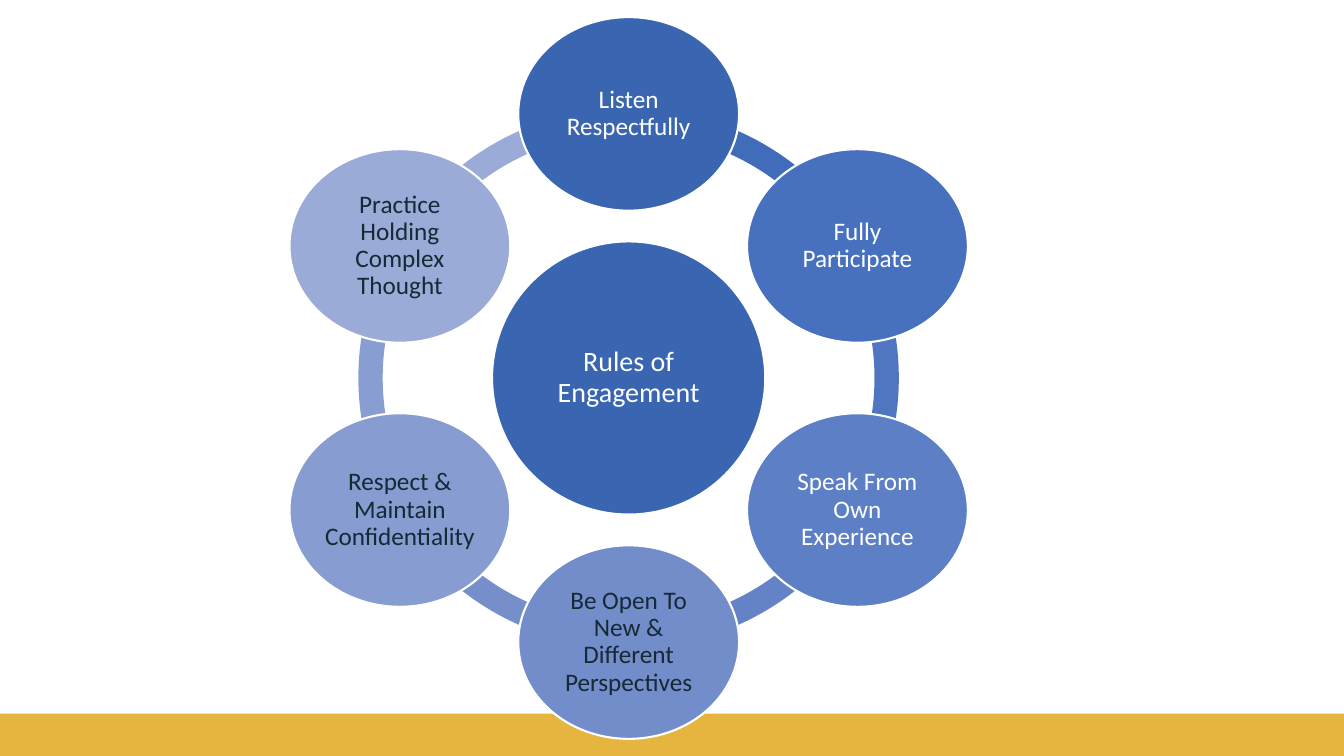
from math import cos, radians, sin

from pptx import Presentation
from pptx.dml.color import RGBColor
from pptx.enum.shapes import MSO_SHAPE
from pptx.enum.text import MSO_ANCHOR, PP_ALIGN
from pptx.util import Inches, Pt

WHITE, INK, GOLD, BLUE = "FFFFFF", "152A35", "E5B53F", "3A66B1"

# Rule, circle colour, text colour, colour of the arc leading to the next rule
RULES = [
    ("Listen Respectfully", BLUE, WHITE, "406CBA"),
    ("Fully Participate", "4770BF", WHITE, "5076C1"),
    ("Speak From Own Experience", "5C7FC5", WHITE, "6383C6"),
    ("Be Open To New & Different Perspectives", "728DCA", INK, "768FCB"),
    ("Respect & Maintain Confidentiality", "879CD1", INK, "889DD1"),
    ("Practice Holding Complex Thought", "9BABD7", INK, "9BABD7"),
]

# Grid of square cells: 75 rows fill the slide's height
ROWS, COLUMNS = 75, 133.3
CENTER_COLUMN, CENTER_ROW = 62.35, 37.5
ORBIT, RING, HUB = 26.2, 53.6, 27.1
NODE_WIDTH, NODE_HEIGHT = 21.9, 19.2
STEP = 360 / len(RULES)
ADJUSTMENT_PER_DEGREE = 0.6  # 60000 angle units per degree, scaled by 100000


def color(hex_string):
    return RGBColor.from_string(hex_string)


class SlideBuilder:
    font_name = "Calibri"
    line_spacing = 0.9
    outline_width = Pt(1.5)

    def __init__(self, presentation):
        self.slide = presentation.slides.add_slide(presentation.slide_layouts[6])
        self.cell = presentation.slide_height / ROWS

    def shape(self, kind, column, row, width, height, fill):
        box = [round(value * self.cell) for value in (column, row, width, height)]
        shape = self.slide.shapes.add_shape(kind, *box)
        shape.shadow.inherit = False
        shape.fill.solid()
        shape.fill.fore_color.rgb = color(fill)
        shape.line.fill.background()
        return shape

    def centered(self, kind, column, row, width, height, fill):
        return self.shape(kind, column - width / 2, row - height / 2, width, height, fill)

    def arc(self, start, end, fill):
        arc = self.centered(MSO_SHAPE.BLOCK_ARC, CENTER_COLUMN, CENTER_ROW, RING, RING, fill)
        arc.adjustments[0] = start % 360 * ADJUSTMENT_PER_DEGREE
        arc.adjustments[1] = end % 360 * ADJUSTMENT_PER_DEGREE
        arc.adjustments[2] = 0.045

    def circle(self, column, row, width, height, fill, text, text_color, size, inset):
        circle = self.centered(MSO_SHAPE.OVAL, column, row, width, height, fill)
        circle.line.color.rgb = color(WHITE)
        circle.line.width = self.outline_width
        frame = circle.text_frame
        frame.word_wrap = True
        frame.vertical_anchor = MSO_ANCHOR.MIDDLE
        frame.margin_left = frame.margin_right = Inches(inset)
        frame.margin_top = frame.margin_bottom = Inches(inset)
        frame.text = text
        paragraph = frame.paragraphs[0]
        paragraph.alignment = PP_ALIGN.CENTER
        paragraph.line_spacing = self.line_spacing
        font = paragraph.runs[0].font
        font.name, font.size = self.font_name, Pt(size)
        font.color.rgb = color(text_color)


def main():
    presentation = Presentation()
    presentation.slide_width, presentation.slide_height = Inches(13.33), Inches(7.5)
    builder = SlideBuilder(presentation)

    # Band along the bottom edge
    builder.shape(MSO_SHAPE.RECTANGLE, 0, 70.8, COLUMNS, ROWS - 70.8, GOLD)

    # Ring, one arc between each pair of neighbours; angles run clockwise from the right
    angles = [270 + STEP * index for index in range(len(RULES))]
    for angle, rule in reversed(list(zip(angles, RULES))):
        builder.arc(angle, angle + STEP, rule[3])

    # Hub
    builder.circle(CENTER_COLUMN, CENTER_ROW, HUB, HUB, BLUE,
                   "Rules of Engagement", WHITE, 20, 0.03)

    # Rules around the hub
    for angle, (text, fill, text_color, _) in zip(angles, RULES):
        builder.circle(CENTER_COLUMN + ORBIT * cos(radians(angle)),
                       CENTER_ROW + ORBIT * sin(radians(angle)),
                       NODE_WIDTH, NODE_HEIGHT, fill, text, text_color, 18, 0.02)

    presentation.save("out.pptx")


if __name__ == "__main__":
    main()
